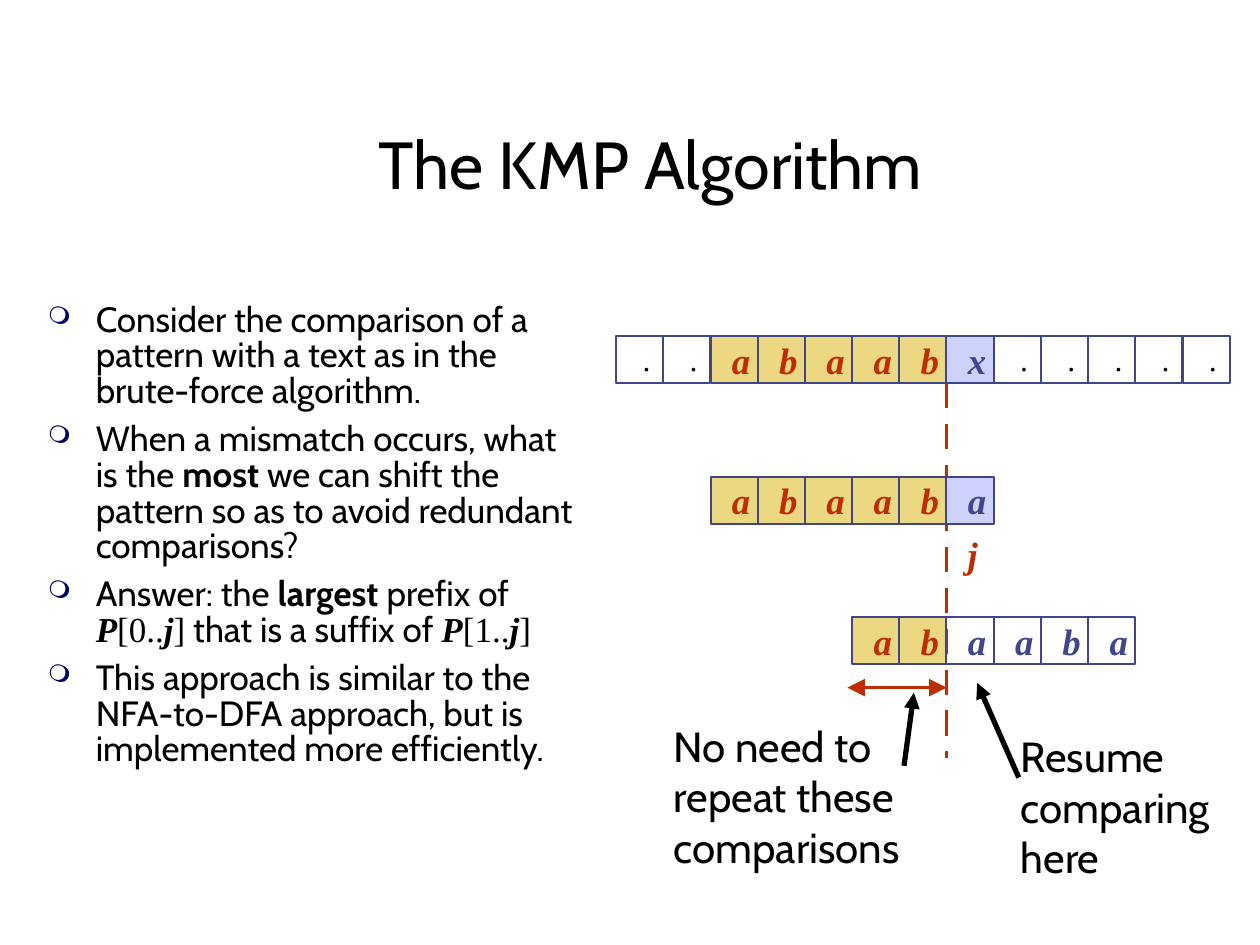
from dataclasses import dataclass
from lxml import etree
from pptx import Presentation
from pptx.dml.color import RGBColor
from pptx.enum.shapes import MSO_CONNECTOR, MSO_SHAPE
from pptx.enum.text import MSO_ANCHOR, PP_ALIGN
from pptx.oxml.ns import qn
from pptx.util import Inches, Pt

LINE, RECT = MSO_CONNECTOR.STRAIGHT, MSO_SHAPE.RECTANGLE
TOP, MIDDLE = MSO_ANCHOR.TOP, MSO_ANCHOR.MIDDLE
LEFT, CENTER = PP_ALIGN.LEFT, PP_ALIGN.CENTER


@dataclass(frozen=True)
class Theme:
    sans: str = "Cabin"
    serif: str = "Times New Roman"
    black: str = "000000"
    navy: str = "000066"
    blue: str = "40458C"
    red: str = "BE2D00"
    gold: str = "ECD882"
    lilac: str = "CFD1FD"
    title: int = 38
    body: int = 20
    label: int = 24
    sign: int = 21
    dot: int = 18
    edge: float = 1.13
    mark: float = 1.75
    arrow: int = 3
    tight: float = 0.85


@dataclass(frozen=True)
class Grid:
    x: float
    y: float
    w: float
    h: float
    cols: int
    rows: int

    def at(self, col, row):
        return self.x + self.w * col / self.cols, self.y + self.h * row / self.rows

    def box(self, col, row, wide, high, cols=1, rows=1):
        x, y = self.at(col, row)
        return Grid(x, y, self.w * wide / self.cols, self.h * high / self.rows, cols, rows)

    def area(self):
        return [Inches(n) for n in (self.x, self.y, self.w, self.h)]


THEME = Theme()
PAGE = Grid(0, 0, 10, 7.5, 100, 75)
GOLD = (THEME.gold, THEME.red)
LILAC = (THEME.lilac, THEME.blue)
CLEAR = (None, THEME.blue)
STRIPS = [
    (0, 0, "..abaabx.....", [CLEAR] * 2 + [GOLD] * 5 + [LILAC] + [CLEAR] * 5),
    (2, 3, "abaaba", [GOLD] * 5 + [LILAC]),
    (5, 6, "abaaba", [GOLD] * 2 + [CLEAR] * 4),
]
PREFIX, SUFFIX = ([("P", "var"), (f"[{n}..", "math"), ("j", "var"), ("]", "math")] for n in (0, 1))
POINTS = [
    [("Consider the comparison of a pattern with a text as in the brute-force algorithm.", "")],
    [("When a mismatch occurs, what is the ", ""), ("most", "bold"),
     (" we can shift the pattern so as to avoid redundant comparisons?", "")],
    [("Answer: the ", ""), ("largest", "bold"), (" prefix of ", ""), *PREFIX,
     (" that is a suffix of ", ""), *SUFFIX],
    [("This approach is similar to the NFA-to-DFA approach, but is implemented more efficiently.", "")],
]


def style(font, face, size, color, bold=False, slant=False):
    font.name, font.size, font.bold, font.italic = face, Pt(size), bold, slant
    font.color.rgb = RGBColor.from_string(color)


def set_frame(frame, pad, wrap=True, anchor=TOP):
    frame.word_wrap, frame.vertical_anchor = wrap, anchor
    frame.margin_left, frame.margin_top, frame.margin_right, frame.margin_bottom = map(Inches, pad)


def add_text(slide, box, text, look, pad, wrap=True, anchor=TOP):
    frame = slide.shapes.add_textbox(*box.area()).text_frame
    set_frame(frame, pad, wrap, anchor)
    frame.text = text
    for para in frame.paragraphs:
        for run in para.runs:
            style(run.font, *look)
    return frame


def add_node(parent, tag, **attrs):
    return etree.SubElement(parent, qn(tag), attrs)


def add_line(slide, start, end, color, width, heads=(), size="med", dash=None):
    line = slide.shapes.add_connector(LINE, *map(Inches, start + end))
    line.line.width = Pt(width)
    line.line.color.rgb = RGBColor.from_string(color)
    props = line.line._get_or_add_ln()
    if dash:
        on, off = dash
        add_node(add_node(props, "a:custDash"), "a:ds", d=str(on * 1000), sp=str(off * 1000))
    for head in heads:
        add_node(props, head, type="triangle", w=size, len=size)
    add_node(line._element.spPr, "a:effectLst")


def add_bullet(para):
    props = para._p.get_or_add_pPr()
    props.set("marL", str(Inches(0.38)))
    props.set("indent", str(Inches(-0.38)))
    add_node(add_node(props, "a:buClr"), "a:srgbClr", val=THEME.navy)
    add_node(props, "a:buSzPct", val="70000")
    add_node(props, "a:buChar", char="❍")


def add_title(slide, box):
    look = (THEME.sans, THEME.title, THEME.black)
    frame = add_text(slide, box, "The KMP Algorithm", look, (0.09, 0.04, 0.09, 0.04), anchor=MIDDLE)
    para = frame.paragraphs[0]
    para.alignment, para.line_spacing = CENTER, THEME.tight


def add_body(slide, box):
    frame = slide.shapes.add_textbox(*box.area()).text_frame
    set_frame(frame, (0.09, 0.04, 0.09, 0.04))
    for spot, parts in enumerate(POINTS):
        para = frame.add_paragraph() if spot else frame.paragraphs[0]
        add_bullet(para)
        para.line_spacing = THEME.tight
        para.space_before = Pt(7 if spot else 0)
        for text, kind in parts:
            run = para.add_run()
            run.text = text
            face = THEME.serif if kind in ("var", "math") else THEME.sans
            style(run.font, face, THEME.body, THEME.black, kind in ("bold", "var"), kind == "var")


def add_cell(slide, box, sign, fill, color):
    cell = slide.shapes.add_shape(RECT, *box.area())
    cell.shadow.inherit = False
    cell.line.width = Pt(THEME.edge)
    cell.line.color.rgb = RGBColor.from_string(THEME.blue)
    if fill:
        cell.fill.solid()
        cell.fill.fore_color.rgb = RGBColor.from_string(fill)
    else:
        cell.fill.background()
    dot = sign == "."
    frame = cell.text_frame
    set_frame(frame, (0.21, 0.03, 0, 0) if dot else (0.17, 0.01, 0, 0))
    frame.text = sign
    para = frame.paragraphs[0]
    para.alignment = LEFT
    if dot:
        style(para.runs[0].font, THEME.serif, THEME.dot, THEME.black)
    else:
        style(para.runs[0].font, THEME.serif, THEME.sign, color, True, True)


def add_strip(slide, box, signs, looks):
    for col, (sign, look) in enumerate(zip(signs, looks)):
        add_cell(slide, box.box(col, 0, 1, 1), sign, *look)


def add_match(slide, grid):
    add_line(slide, grid.at(7, 1), grid.at(7, 9), THEME.red, THEME.mark, dash=(815, 515))
    for col, row, signs, looks in STRIPS:
        size = len(signs)
        add_strip(slide, grid.box(col, row, size, 1, size), signs, looks)
    look = (THEME.serif, THEME.sign, THEME.red, True, True)
    add_text(slide, grid.box(7.45, 4.17, 0.21, 0.94), "j", look, (0, 0, 0, 0), False)
    add_line(slide, grid.at(4.9, 7.5), grid.at(7, 7.5), THEME.red, THEME.mark,
             ("a:headEnd", "a:tailEnd"), "lg")
    look = (THEME.sans, THEME.label, THEME.black)
    for place, text, start, end in [
        ((0.96, 8.07, 5.45, 3.5), "No need to\nrepeat these\ncomparisons", (6.1, 9.17), (6.31, 7.61)),
        ((8.31, 8.29, 4.65, 3.5), "Resume\ncomparing\nhere", (8.53, 9.42), (7.65, 7.4)),
    ]:
        add_text(slide, grid.box(*place), text, look, (0.1, 0.05, 0.1, 0.05), False)
        add_line(slide, grid.at(*start), grid.at(*end), THEME.black, THEME.arrow, ("a:tailEnd",))


def main():
    deck = Presentation()
    deck.slide_width, deck.slide_height = Inches(PAGE.w), Inches(PAGE.h)
    slide = deck.slides.add_slide(deck.slide_layouts[6])
    add_title(slide, PAGE.box(7.5, 7.2, 88.3, 12.5))
    add_body(slide, PAGE.box(2.9, 23.7, 44.2, 50.8))
    add_match(slide, PAGE.box(48.9, 26.7, 48.7, 44.6, 13, 12))
    deck.save("out.pptx")


if __name__ == "__main__":
    main()
